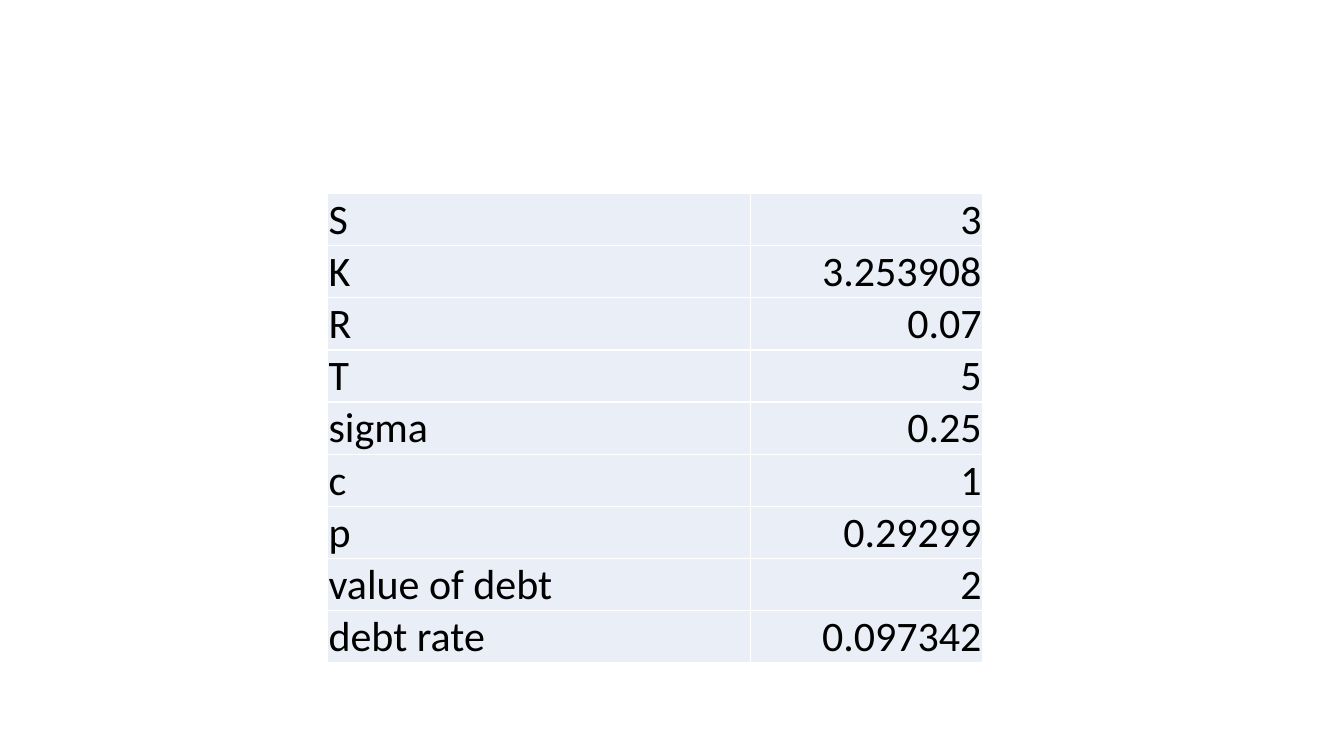
from typing import NamedTuple

import lxml.etree
import pptx
import pptx.dml.color
import pptx.enum.text
import pptx.oxml.ns
import pptx.table
import pptx.util

Cm = pptx.util.Cm
Pt = pptx.util.Pt
ALIGN = pptx.enum.text.PP_ALIGN

BLACK = pptx.dml.color.RGBColor(0x00, 0x00, 0x00)
WHITE = pptx.dml.color.RGBColor(0xFF, 0xFF, 0xFF)
PALE_BLUE = pptx.dml.color.RGBColor(0xEA, 0xEF, 0xF7)

COLUMN_WIDTHS = (Cm(10.65), Cm(5.85))
ROW_HEIGHT = Cm(1.29)
CELL_FORMAT = {
    "margin_left": Cm(0.02),
    "margin_right": Cm(0.02),
    "margin_top": Cm(0.02),
    "margin_bottom": Cm(0),
    "vertical_anchor": pptx.enum.text.MSO_ANCHOR.BOTTOM,
}
FONT_FORMAT = {"name": "Calibri", "size": Pt(30), "bold": False}


class Parameter(NamedTuple):
    label: str
    value: str


PARAMETERS = (
    Parameter("S", "3"),
    Parameter("K", "3.253908"),
    Parameter("R", "0.07"),
    Parameter("T", "5"),
    Parameter("sigma", "0.25"),
    Parameter("c", "1"),
    Parameter("p", "0.29299"),
    Parameter("value of debt", "2"),
    Parameter("debt rate", "0.097342"),
)


def add_borders(cell: pptx.table._Cell) -> None:
    """Draw all four sides; must run before the cell fill is set."""
    qn = pptx.oxml.ns.qn
    properties = cell._tc.get_or_add_tcPr()
    for side in ("lnL", "lnR", "lnT", "lnB"):
        line = lxml.etree.SubElement(properties, qn(f"a:{side}"), w=str(Pt(1)))
        fill = lxml.etree.SubElement(line, qn("a:solidFill"))
        lxml.etree.SubElement(fill, qn("a:srgbClr"), val=str(WHITE))


def fill_cell(cell: pptx.table._Cell, text: str, alignment: ALIGN) -> None:
    add_borders(cell)
    cell.fill.solid()
    cell.fill.fore_color.rgb = PALE_BLUE
    for name, value in CELL_FORMAT.items():
        setattr(cell, name, value)
    paragraph = cell.text_frame.paragraphs[0]
    paragraph.alignment = alignment
    run = paragraph.add_run()
    run.text = text
    for name, value in FONT_FORMAT.items():
        setattr(run.font, name, value)
    run.font.color.rgb = BLACK


def main() -> None:
    presentation = pptx.Presentation()
    presentation.slide_width = Cm(33.87)
    presentation.slide_height = Cm(19.05)
    slide = presentation.slides.add_slide(presentation.slide_layouts[6])

    table = slide.shapes.add_table(
        len(PARAMETERS), len(COLUMN_WIDTHS), Cm(8.26), Cm(4.88),
        sum(COLUMN_WIDTHS), ROW_HEIGHT * len(PARAMETERS),
    ).table
    table.first_row = False
    table.horz_banding = False
    for column, width in zip(table.columns, COLUMN_WIDTHS):
        column.width = width
    for row, parameter in zip(table.rows, PARAMETERS):
        row.height = ROW_HEIGHT
        label_cell, value_cell = row.cells
        fill_cell(label_cell, parameter.label, ALIGN.LEFT)
        fill_cell(value_cell, parameter.value, ALIGN.RIGHT)

    presentation.save("out.pptx")


if __name__ == "__main__":
    main()
